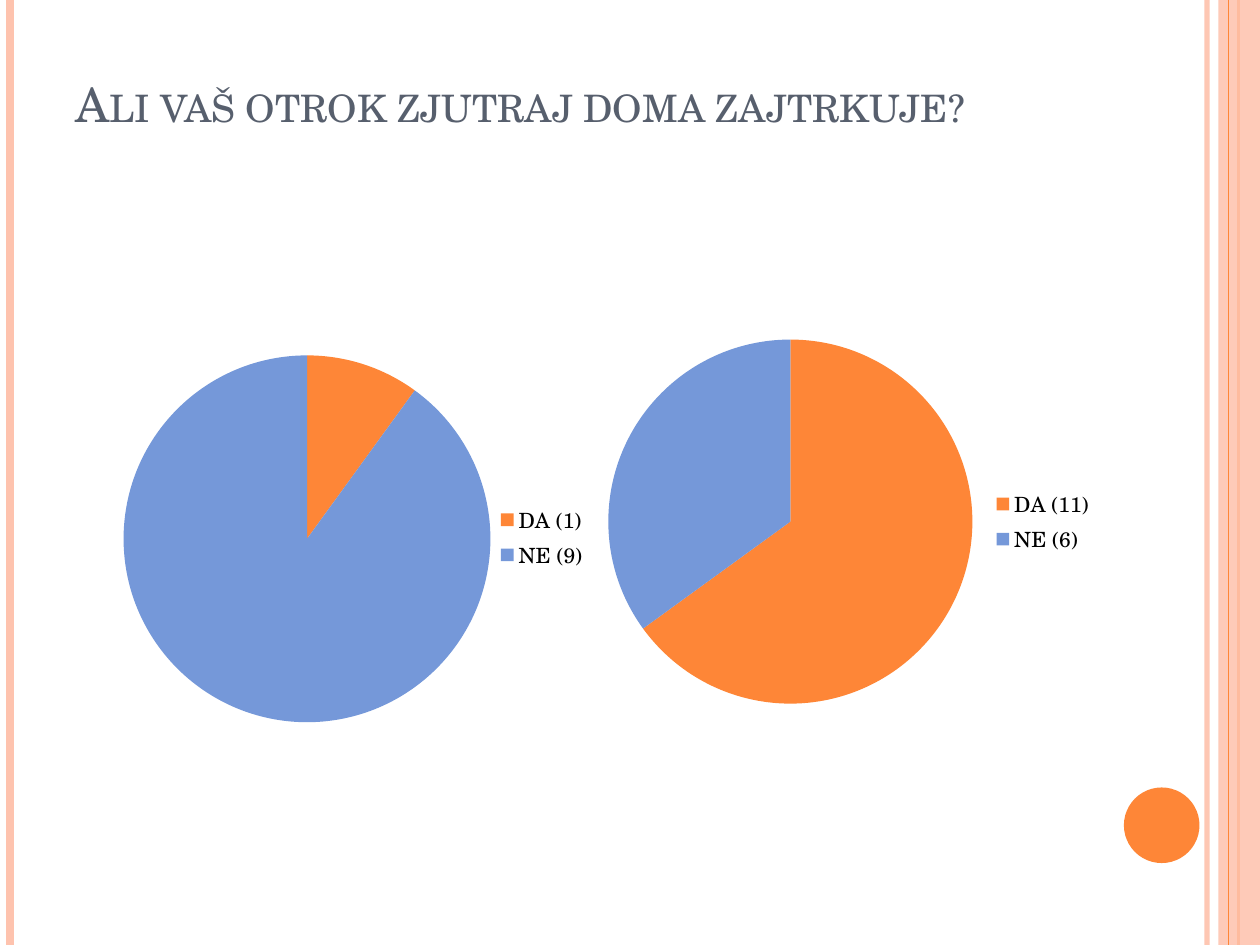
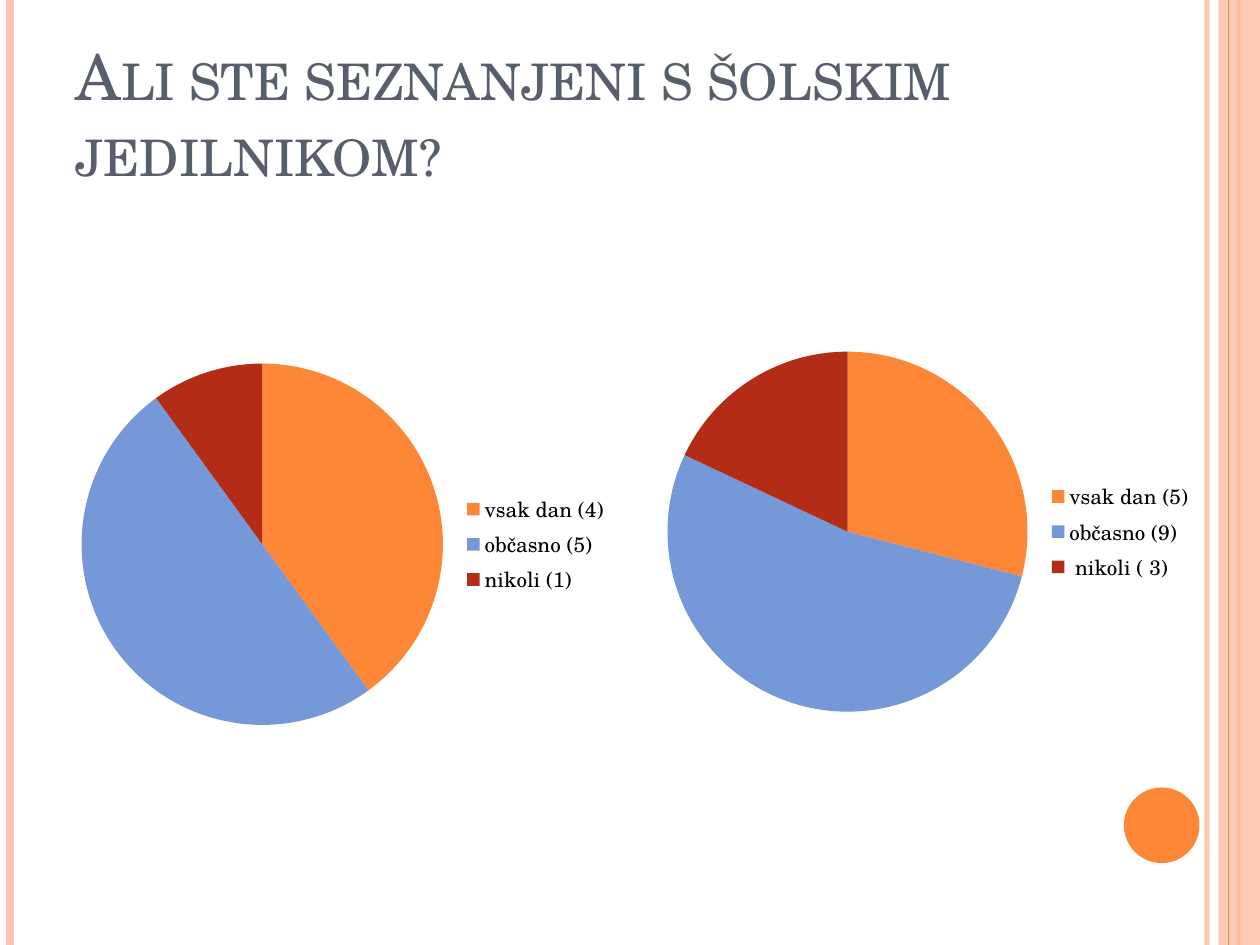
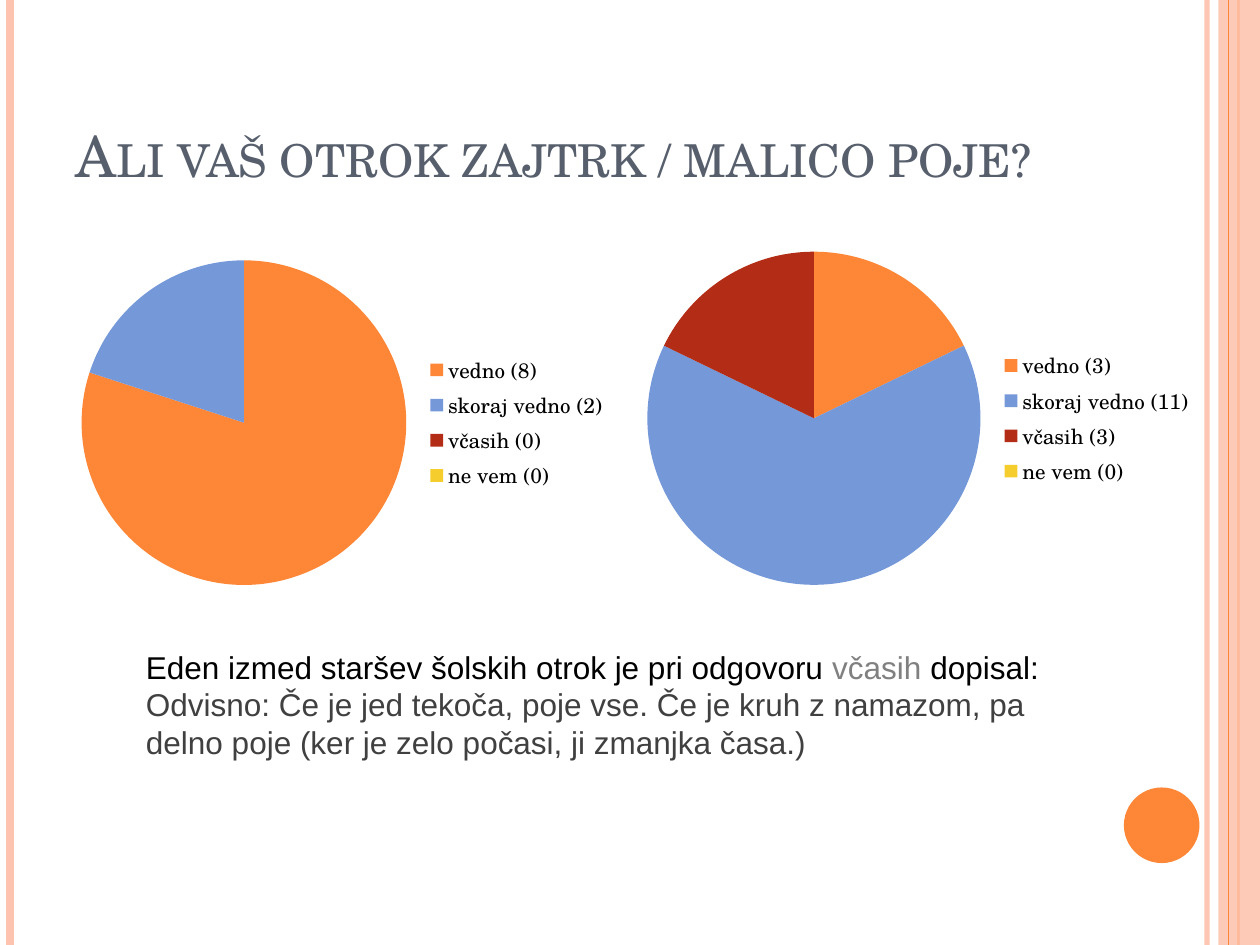
from lxml.etree import SubElement
from pptx import Presentation
from pptx.chart.data import CategoryChartData
from pptx.dml.color import RGBColor
from pptx.enum.chart import XL_CHART_TYPE, XL_LEGEND_POSITION
from pptx.enum.shapes import MSO_CONNECTOR, MSO_SHAPE
from pptx.enum.text import MSO_ANCHOR, MSO_AUTO_SIZE, PP_ALIGN
from pptx.oxml import parse_xml
from pptx.oxml.ns import nsdecls, qn
from pptx.util import Inches, Pt

COLORS = {
    "title": "575F6D", "peach": "FEC3AE", "orange": "FE8637", "blue": "7598D9",
    "red": "B32C16", "yellow": "F5CD2D", "black": "000000", "gray": "808080",
    "dark": "404040",
}
SLICE_COLORS = ("orange", "blue", "red", "yellow")
SERIF, SANS = "TeX Gyre Schola", "Arial"

# Shared lines: x, colour, width in points, opacity in percent
LEFT_LINES = [(9.58, "peach", 3, 93), (0.08, "peach", 4.5, 100), (9.83, "orange", 1.5, 100)]
BAND_LINE = (9.75, "orange", 0.75, 100)

# Title runs are (text, size); pies hold a box, their slices and an optional plot area
SLIDES = [
    {
        "title": [("Ali vaš otrok zjutraj doma zajtrkuje?", 27)],
        "line_break": True,
        "pies": [
            {"box": (4.69, 2.25, 4.09, 3.78), "slices": [("DA (11)", 65), ("NE (6)", 35)]},
            {"box": (0.67, 2.57, 4.09, 3.39), "slices": [("DA (1)", 10), ("NE (9)", 90)],
             "plot": {"x": 0.076, "y": 0.05, "w": 0.712, "h": 0.907}},
        ],
    },
    {
        "title": [("Ali ste seznanjeni s šolskim jedilnikom?", 36), (" ", 27)],
        "pies": [
            {"box": (0.51, 2.57, 4.42, 3.5),
             "slices": [("vsak dan (4)", 40), ("občasno (5)", 50), ("nikoli (1)", 10)]},
            {"box": (5.16, 2.41, 4.41, 3.62),
             "slices": [("vsak dan (5)", 29), ("občasno (9)", 53), (" nikoli ( 3)", 18)]},
        ],
    },
    {
        "title": [("Ali vaš otrok zajtrk / malico poje? ", 32.4)],
        "pies": [
            {"box": (0.51, 1.78, 4.41, 3.15),
             "slices": [("vedno (8)", 80), ("skoraj vedno (2)", 20),
                        ("včasih (0)", 0), ("ne vem (0)", 0)]},
            {"box": (5, 1.39, 4.57, 3.86),
             "slices": [("vedno (3)", 18), ("skoraj vedno (11)", 65),
                        ("včasih (3)", 18), ("ne vem (0)", 0)]},
        ],
        "note": [
            [("Eden izmed staršev šolskih otrok je pri odgovoru ", "black"),
             ("včasih", "gray"), (" dopisal:", "black")],
            [("Odvisno: Če je jed tekoča, poje vse. Če je kruh z namazom, pa delno poje "
              "(ker je zelo počasi, ji zmanjka časa.)", "dark")],
        ],
    },
]
NOTE_BOX = (1.06, 5.09, 7.32, 1.01)


def rgb(name):
    return RGBColor.from_string(COLORS[name])


def inches(box):
    return [Inches(value) for value in box]


def set_opacity(shape, percent):
    color = next(shape.element.spPr.iter(qn("a:srgbClr")))
    SubElement(color, qn("a:alpha")).set("val", str(percent * 1000))


def set_font(font, name, size, color):
    font.name = name
    font.size = Pt(size)
    font.color.rgb = rgb(color)


def add_vertical_line(slide, x, color, width, opacity):
    line = slide.shapes.add_connector(
        MSO_CONNECTOR.STRAIGHT, Inches(x), 0, Inches(x), Inches(7.5))
    line.line.color.rgb = rgb(color)
    line.line.width = Pt(width)
    SubElement(line.element.spPr, qn("a:effectLst"))
    if opacity < 100:
        set_opacity(line, opacity)
    return line


def add_filled_shape(slide, kind, box, color):
    shape = slide.shapes.add_shape(kind, *inches(box))
    shape.shadow.inherit = False
    shape.fill.solid()
    shape.fill.fore_color.rgb = rgb(color)
    shape.line.fill.background()
    return shape


def decorate_layout(layout, slide):
    """Draw the side bands and the disc, then move them to the shared layout."""
    parts = [add_vertical_line(slide, *line) for line in LEFT_LINES]
    band = add_filled_shape(slide, MSO_SHAPE.RECTANGLE, (9.67, 0, 0.33, 7.5), "peach")
    set_opacity(band, 87)
    parts += [
        band,
        add_vertical_line(slide, *BAND_LINE),
        add_filled_shape(slide, MSO_SHAPE.OVAL, (8.92, 6.25, 0.6, 0.6), "orange"),
    ]
    for index, part in enumerate(parts, start=2):
        layout.shapes.element.insert(index, part.element)


def place_layout_title(layout):
    title = layout.placeholders[0]
    title.left, title.top, title.width, title.height = inches((0.5, 0.3, 8.17, 1.25))


def fill_title(slide, runs, line_break):
    frame = slide.shapes.title.text_frame
    frame.vertical_anchor = MSO_ANCHOR.BOTTOM
    frame.auto_size = MSO_AUTO_SIZE.NONE
    paragraph = frame.paragraphs[0]
    paragraph.alignment = PP_ALIGN.LEFT
    set_font(paragraph.font, SERIF, runs[0][1], "title")
    for text, size in runs:
        run = paragraph.add_run()
        run.text = text
        set_font(run.font, SERIF, size, "title")
        run.font._element.set("cap", "small")
    if line_break:
        paragraph.add_line_break()


def add_pie(slide, box, slices, plot=None):
    data = CategoryChartData()
    data.categories = [label for label, _ in slices]
    data.add_series("Series 1", [value for _, value in slices])
    chart = slide.shapes.add_chart(XL_CHART_TYPE.PIE, *inches(box), data).chart
    chart.has_title = False
    set_font(chart.font, SERIF, 10, "black")
    chart.has_legend = True
    chart.legend.position = XL_LEGEND_POSITION.RIGHT
    chart.legend.include_in_layout = False
    set_font(chart.legend.font, SERIF, 12, "black")

    pie = chart.plots[0]
    pie.vary_by_categories = True
    for index, color in enumerate(SLICE_COLORS[:len(slices)]):
        fill = pie.series[0].points[index].format.fill
        fill.solid()
        fill.fore_color.rgb = rgb(color)
    if plot:
        set_plot_area(chart, plot)


def set_plot_area(chart, plot):
    area = next(chart.element.iter(qn("c:plotArea")))
    for layout in area.findall(qn("c:layout")):
        area.remove(layout)
    sizes = "".join(f'<c:{key} val="{value}"/>' for key, value in plot.items())
    area.insert(0, parse_xml(
        f'<c:layout {nsdecls("c")}><c:manualLayout><c:layoutTarget val="inner"/>'
        f'<c:xMode val="edge"/><c:yMode val="edge"/>{sizes}</c:manualLayout></c:layout>'))


def add_note(slide, paragraphs):
    frame = slide.shapes.add_textbox(*inches(NOTE_BOX)).text_frame
    frame.word_wrap = True
    frame.auto_size = MSO_AUTO_SIZE.SHAPE_TO_FIT_TEXT
    for index, runs in enumerate(paragraphs):
        paragraph = frame.add_paragraph() if index else frame.paragraphs[0]
        paragraph.font.name = SANS
        paragraph.font.size = Pt(18)
        for text, color in runs:
            run = paragraph.add_run()
            run.text = text
            set_font(run.font, SANS, 18, color)


def main():
    presentation = Presentation()
    presentation.slide_width, presentation.slide_height = Inches(10), Inches(7.5)
    layout = presentation.slide_layouts[5]
    place_layout_title(layout)
    for index, content in enumerate(SLIDES):
        slide = presentation.slides.add_slide(layout)
        if index == 0:
            decorate_layout(layout, slide)
        fill_title(slide, content["title"], content.get("line_break", False))
        for pie in content["pies"]:
            add_pie(slide, **pie)
        if "note" in content:
            add_note(slide, content["note"])
    presentation.save("out.pptx")


if __name__ == "__main__":
    main()
